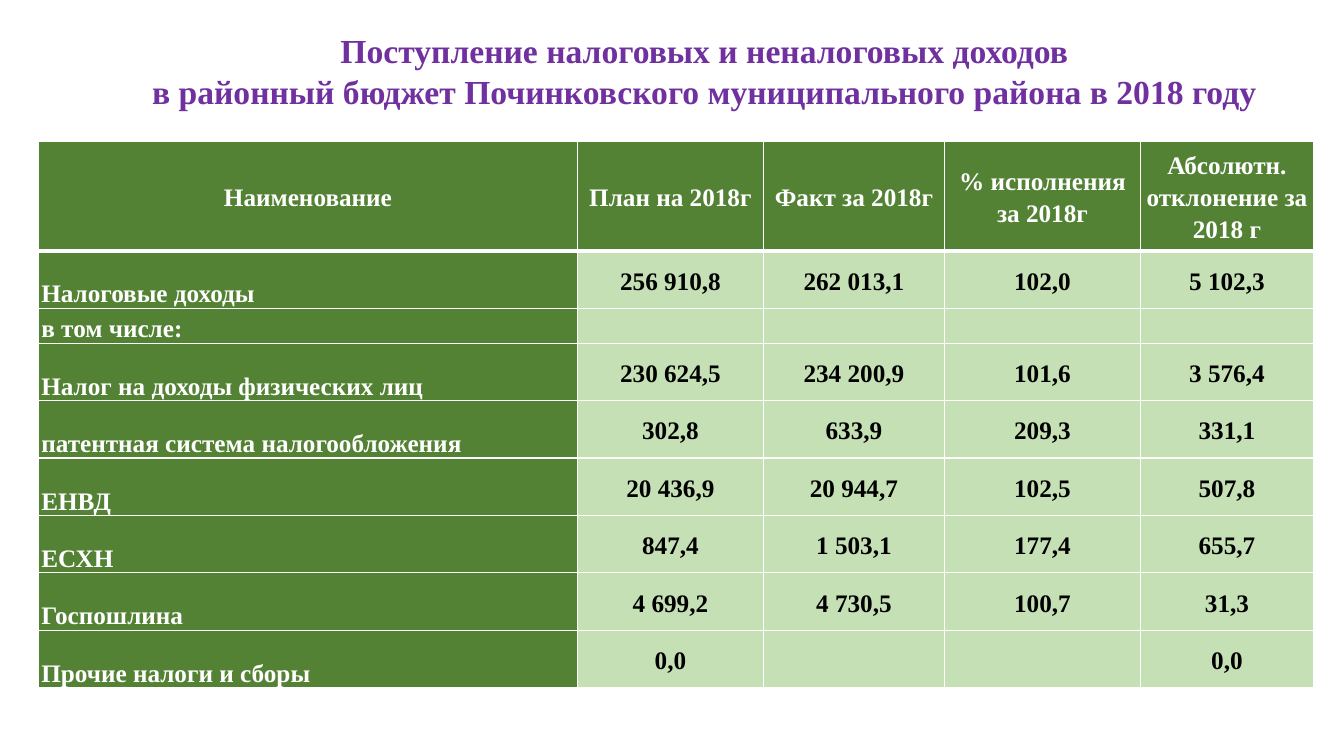
from lxml import etree
from pptx import Presentation
from pptx.dml.color import RGBColor
from pptx.enum.text import MSO_ANCHOR, PP_ALIGN
from pptx.oxml.ns import qn
from pptx.util import Inches, Pt

CENTER, LEFT = PP_ALIGN.CENTER, PP_ALIGN.LEFT
MIDDLE, BOTTOM = MSO_ANCHOR.MIDDLE, MSO_ANCHOR.BOTTOM

FONT = "Times New Roman"
WHITE, BLACK, PURPLE = "FFFFFF", "000000", "7030A0"
DARK_GREEN, LIGHT_GREEN = "548235", "C5E0B4"

TITLE = [
    "Поступление налоговых и неналоговых доходов",
    "в районный бюджет Починковского муниципального района в 2018 году",
]
INCOME = [
    ["Наименование", "План на 2018г", "Факт за 2018г",
     "% исполнения за 2018г", "Абсолютн. отклонение за 2018 г"],
    ["Налоговые доходы", "256 910,8", "262 013,1", "102,0", "5 102,3"],
    ["в том числе:", "", "", "", ""],
    ["Налог на доходы физических лиц", "230 624,5", "234 200,9", "101,6", "3 576,4"],
    ["патентная система налогообложения", "302,8", "633,9", "209,3", "331,1"],
    ["ЕНВД", "20 436,9", "20 944,7", "102,5", "507,8"],
    ["ЕСХН", "847,4", "1 503,1", "177,4", "655,7"],
    ["Госпошлина", "4 699,2", "4 730,5", "100,7", "31,3"],
    ["Прочие налоги и сборы", "0,0", "", "", "0,0"],
]
COL_WIDTHS = [5.35, 1.84, 1.8, 1.94, 1.72]
ROW_HEIGHTS = [1.09, 0.57, 0.33] + [0.57] * 6


def rgb(color):
    return RGBColor.from_string(color)


def add_run(p, text, size, color):
    r = p.add_run()
    r.text = text
    r.font.name = FONT
    r.font.size = Pt(size)
    r.font.bold = True
    r.font.color.rgb = rgb(color)


def add_title(slide, left, top, width, height):
    box = slide.shapes.add_textbox(*map(Inches, (left, top, width, height)))
    tf = box.text_frame
    tf.word_wrap = True
    for i, line in enumerate(TITLE):
        p = tf.add_paragraph() if i else tf.paragraphs[0]
        p.alignment = CENTER
        p._p.get_or_add_pPr().set("indent", str(Inches(0.49)))
        add_run(p, line, 24, PURPLE)


def set_borders(cell, top, bottom):
    """Draw white cell edges, 1 pt at the sides."""
    tc_pr = cell._tc.get_or_add_tcPr()
    for tag, width in (("a:lnL", 1), ("a:lnR", 1), ("a:lnT", top), ("a:lnB", bottom)):
        ln = etree.SubElement(tc_pr, qn(tag), w=str(Pt(width)))
        fill = etree.SubElement(ln, qn("a:solidFill"))
        etree.SubElement(fill, qn("a:srgbClr"), val=WHITE)


def fill_cell(cell, text, row, col):
    header, label = row == 0, col == 0
    dark = header or label
    set_borders(cell, 3 if row == 1 else 1, 3 if header else 1)
    cell.fill.solid()
    cell.fill.fore_color.rgb = rgb(DARK_GREEN if dark else LIGHT_GREEN)
    cell.margin_left = cell.margin_right = Inches(0.03)
    cell.margin_top = cell.margin_bottom = 0
    cell.vertical_anchor = BOTTOM if label and not header else MIDDLE
    p = cell.text_frame.paragraphs[0]
    p.alignment = LEFT if label and not header else CENTER
    if text:
        p.line_spacing = 1.15
        add_run(p, text, 18, WHITE if dark else BLACK)


def add_income_table(slide, left, top):
    frame = slide.shapes.add_table(
        len(ROW_HEIGHTS), len(COL_WIDTHS), Inches(left), Inches(top),
        Inches(sum(COL_WIDTHS)), Inches(sum(ROW_HEIGHTS)))
    table = frame.table
    for column, width in zip(table.columns, COL_WIDTHS):
        column.width = Inches(width)
    for row, height in zip(table.rows, ROW_HEIGHTS):
        row.height = Inches(height)
    for i, values in enumerate(INCOME):
        for j, text in enumerate(values):
            fill_cell(table.cell(i, j), text, i, j)


def main():
    prs = Presentation()
    prs.slide_width, prs.slide_height = Inches(13.33), Inches(7.5)
    slide = prs.slides.add_slide(prs.slide_layouts[6])
    add_title(slide, 0.67, 0.25, 12.14, 0.91)
    add_income_table(slide, 0.38, 1.4)
    prs.save("out.pptx")


if __name__ == "__main__":
    main()
